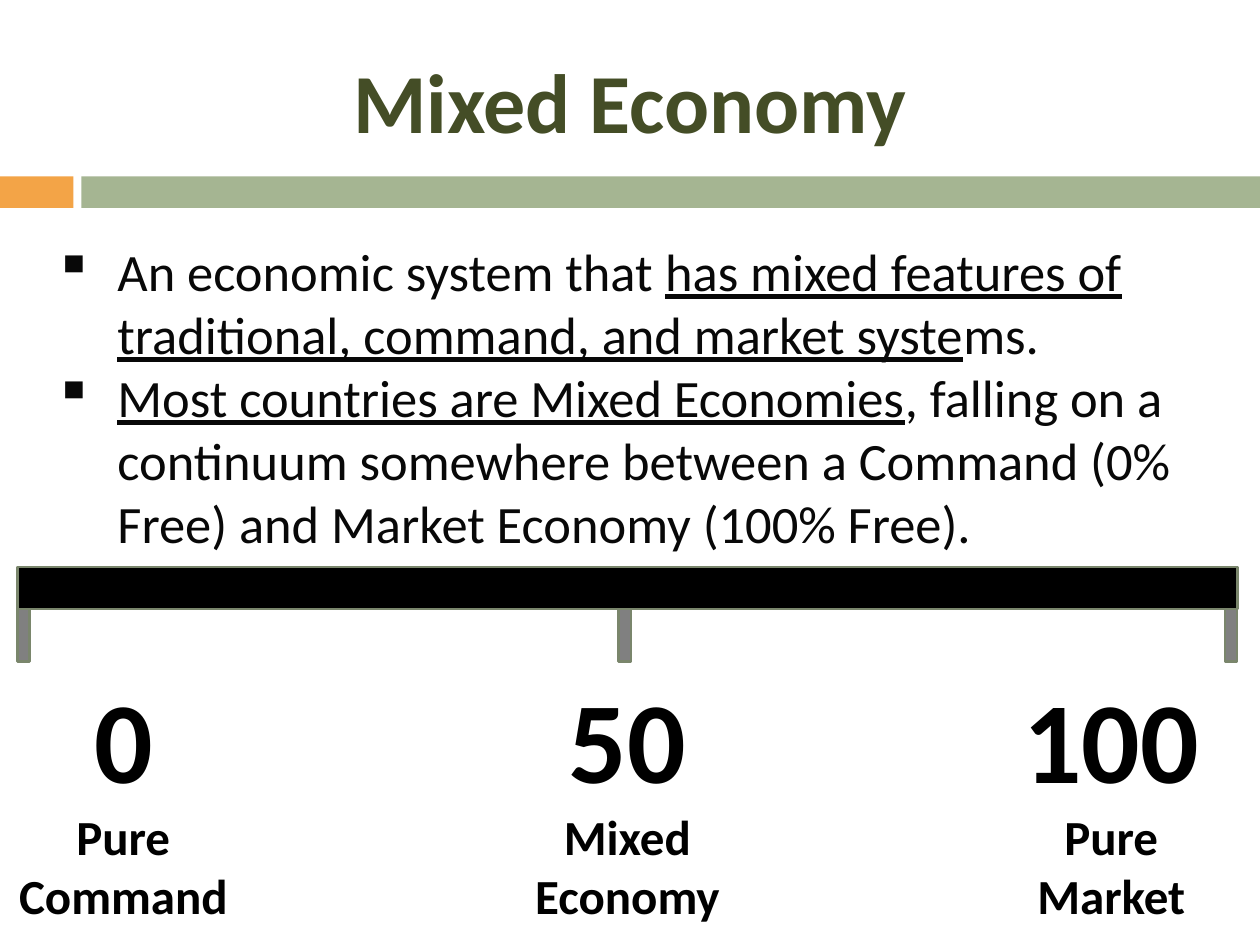
"""Build a slide placing mixed economies on a scale from command to market."""
from dataclasses import dataclass
from typing import Optional

import lxml.etree
import pptx
import pptx.dml.color
import pptx.enum.shapes
import pptx.enum.text
import pptx.oxml.ns
import pptx.util

Pt = pptx.util.Pt
RGBColor = pptx.dml.color.RGBColor
CENTER = pptx.enum.text.PP_ALIGN.CENTER

FONT = "Calibri"
ORANGE = RGBColor(0xF3, 0xA4, 0x47)
SAGE = RGBColor(0xA5, 0xB5, 0x92)
OLIVE = RGBColor(0x44, 0x4D, 0x26)
INK = RGBColor(0x08, 0x08, 0x08)
BLACK = RGBColor(0, 0, 0)
GRAY = RGBColor(0x80, 0x80, 0x80)
EDGE = RGBColor(0x7A, 0x86, 0x6C)


@dataclass(frozen=True)
class Bar:
    left: float
    top: float
    width: float
    height: float
    fill: RGBColor
    edge: Optional[RGBColor] = None


@dataclass(frozen=True)
class Mark:
    tick_left: float
    label_left: float
    value: str
    name: str


BARS = [
    Bar(0, 100.8, 42, 18, ORANGE),
    Bar(46.5, 100.8, 673.5, 18, SAGE),
    Bar(10, 324, 697, 24, BLACK, EDGE),
]
MARKS = [
    Mark(10, -1.5, "0", "Pure Command"),
    Mark(353.5, 286.5, "50", "Mixed Economy"),
    Mark(700, 563, "100", "Pure Market"),
]
BULLETS = [
    [
        ("An economic system that ", False),
        ("has mixed features of traditional, command, and market syste", True),
        ("ms.", False),
    ],
    [
        ("Most countries are Mixed Economies", True),
        (", falling on a continuum somewhere between a Command (0% Free) "
         "and Market Economy (100% Free).", False),
    ],
]


def style_font(font, size: float, color: RGBColor, bold: bool = False) -> None:
    font.name = FONT
    font.size = Pt(size)
    font.bold = bold
    font.color.rgb = color


def draw_bar(page, bar: Bar) -> None:
    shape = page.shapes.add_shape(
        pptx.enum.shapes.MSO_SHAPE.RECTANGLE,
        Pt(bar.left), Pt(bar.top), Pt(bar.width), Pt(bar.height))
    shape.shadow.inherit = False
    shape.fill.solid()
    shape.fill.fore_color.rgb = bar.fill
    if bar.edge is None:
        shape.line.fill.background()
    else:
        shape.line.color.rgb = bar.edge
        shape.line.width = Pt(1.5)


def add_text_frame(page, left: float, top: float, width: float, height: float):
    box = page.shapes.add_textbox(Pt(left), Pt(top), Pt(width), Pt(height))
    box.text_frame.word_wrap = True
    return box.text_frame


def draw_title(page, text: str) -> None:
    title = page.shapes.title
    title.left, title.top = Pt(0), Pt(18)
    title.width, title.height = Pt(720), Pt(78)
    title.text_frame.text = text
    title.text_frame.vertical_anchor = pptx.enum.text.MSO_ANCHOR.MIDDLE
    para = title.text_frame.paragraphs[0]
    para.alignment = CENTER
    style_font(para.font, 48, OLIVE, True)


def draw_bullets(page) -> None:
    frame = add_text_frame(page, 24, 133, 672, 189.5)
    for index, spans in enumerate(BULLETS):
        para = frame.paragraphs[0] if index == 0 else frame.add_paragraph()
        properties = para._p.get_or_add_pPr()
        properties.set("marL", str(Pt(36)))
        properties.set("indent", str(Pt(-36)))
        lxml.etree.SubElement(
            properties, pptx.oxml.ns.qn("a:buChar")).set("char", "▪")
        style_font(para.font, 30, INK)
        for text, underlined in spans:
            span = para.add_run()
            span.text = text
            span.font.underline = underlined


def draw_mark(page, mark: Mark) -> None:
    draw_bar(page, Bar(mark.tick_left, 348, 7, 30, GRAY, EDGE))
    frame = add_text_frame(page, mark.label_left, 378, 144, 155)
    frame.text = f"{mark.value}\n{mark.name}"
    for para, size in zip(frame.paragraphs, (66, 28)):
        para.alignment = CENTER
        style_font(para.font, size, BLACK, True)


def main() -> None:
    deck = pptx.Presentation()
    deck.slide_width, deck.slide_height = Pt(720), Pt(540)
    page = deck.slides.add_slide(deck.slide_layouts.get_by_name("Title Only"))
    draw_title(page, "Mixed Economy")
    for bar in BARS:
        draw_bar(page, bar)
    draw_bullets(page)
    for mark in MARKS:
        draw_mark(page, mark)
    deck.save("out.pptx")


if __name__ == "__main__":
    main()
